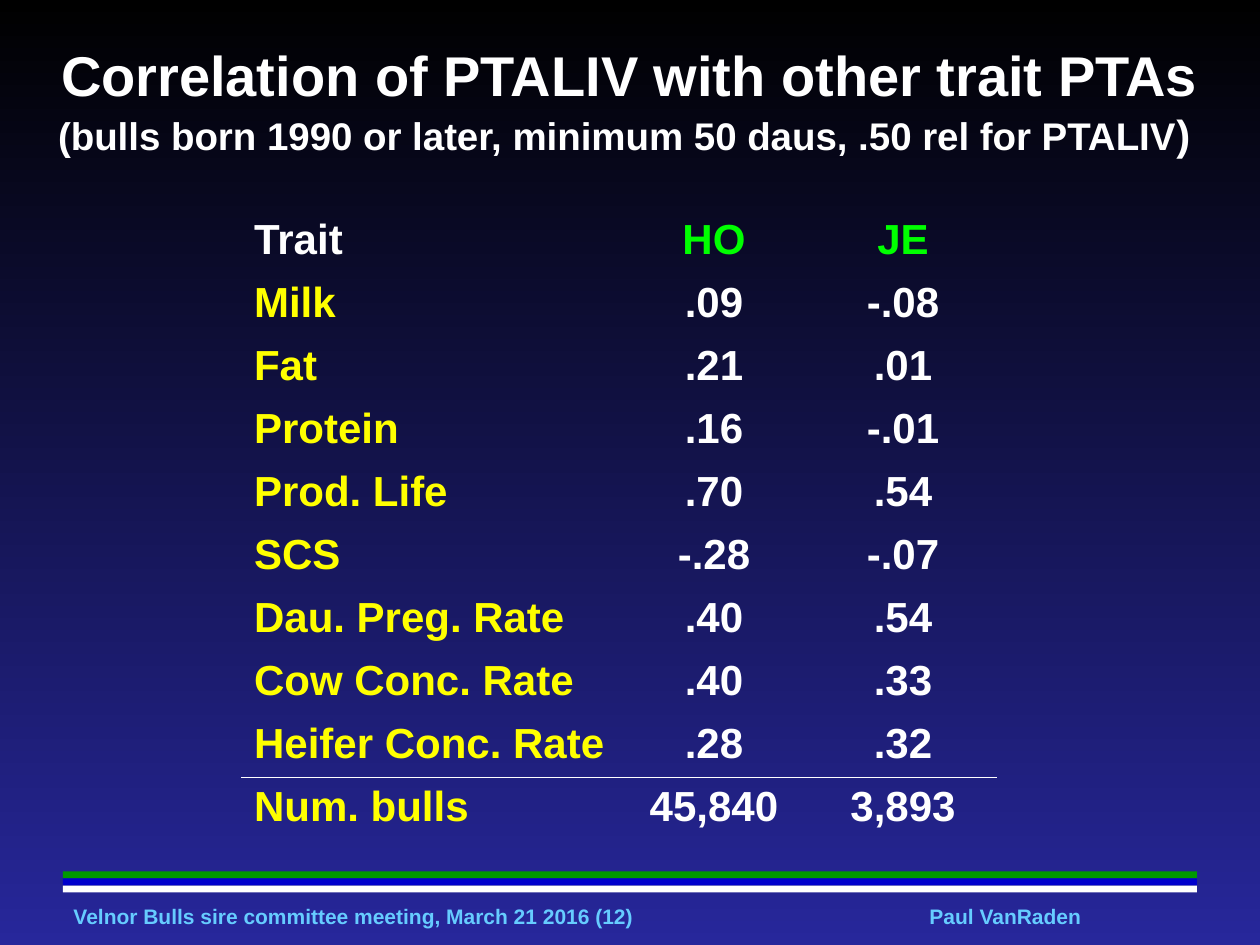
from lxml.etree import SubElement
from pptx import Presentation
from pptx.dml.color import RGBColor
from pptx.enum.shapes import MSO_SHAPE as Preset
from pptx.enum.text import MSO_ANCHOR as Anchor, PP_ALIGN as Align
from pptx.oxml.ns import qn
from pptx.util import Pt

BLACK = RGBColor(0x00, 0x00, 0x00)
NAVY = RGBColor(0x27, 0x27, 0x9B)
WHITE = RGBColor(0xFF, 0xFF, 0xFF)
YELLOW = RGBColor(0xFF, 0xFF, 0x00)
LIME = RGBColor(0x00, 0xFF, 0x00)
GREEN = RGBColor(0x00, 0x99, 0x00)
BLUE = RGBColor(0x00, 0x00, 0xCC)
SKY = RGBColor(0x66, 0xCC, 0xFF)

NO_STYLE = "{2D5ABB26-0587-4C30-8999-92F81FD0307C}"
COLUMN_WIDTHS = (216, 108, 108)
CORRELATIONS = (
    ("Trait", "HO", "JE"),
    ("Milk", ".09", "-.08"),
    ("Fat", ".21", ".01"),
    ("Protein", ".16", "-.01"),
    ("Prod. Life", ".70", ".54"),
    ("SCS", "-.28", "-.07"),
    ("Dau. Preg. Rate", ".40", ".54"),
    ("Cow Conc. Rate", ".40", ".33"),
    ("Heifer Conc. Rate", ".28", ".32"),
    ("Num. bulls", "45,840", "3,893"),
)


def set_font(font, size, color):
    font.name = "Arial"
    font.size = Pt(size)
    font.bold = True
    font.color.rgb = color


def add_background(slide):
    fill = slide.background.fill
    fill.gradient()
    fill.gradient_angle = 270
    for stop, color in zip(fill.gradient_stops, (BLACK, NAVY)):
        stop.color.rgb = color


def add_title(slide, left, top, width, height):
    frame = slide.shapes.add_textbox(Pt(left), Pt(top), Pt(width), Pt(height)).text_frame
    frame.word_wrap = True
    frame.vertical_anchor = Anchor.MIDDLE
    paragraph = frame.paragraphs[0]
    paragraph.alignment = Align.CENTER
    for text, size in (
        ("Correlation of PTALIV with other trait PTAs ", 32),
        ("(bulls born 1990 or later, minimum 50 daus, .50 rel for PTALIV", 22),
        (") ", 24),
    ):
        run = paragraph.add_run()
        run.text = text
        set_font(run.font, size, WHITE)


def add_rule(cell, side):
    line = SubElement(cell._tc.get_or_add_tcPr(), qn(f"a:{side}"), w=str(Pt(1)))
    fill = SubElement(line, qn("a:solidFill"))
    SubElement(fill, qn("a:srgbClr"), val=str(WHITE))


def cell_color(row, column):
    if row == 0:
        return LIME if column else WHITE
    return WHITE if column else YELLOW


def add_correlations(slide, left, top, width, height):
    row_count = len(CORRELATIONS)
    table = slide.shapes.add_table(
        row_count, len(COLUMN_WIDTHS), Pt(left), Pt(top), Pt(width), Pt(height)
    ).table
    table.first_row = table.horz_banding = False
    table._tbl.tblPr.find(qn("a:tableStyleId")).text = NO_STYLE
    for column, column_width in zip(table.columns, COLUMN_WIDTHS):
        column.width = Pt(column_width)
    for row, values in enumerate(CORRELATIONS):
        for column, value in enumerate(values):
            cell = table.cell(row, column)
            cell.text = value
            paragraph = cell.text_frame.paragraphs[0]
            paragraph.alignment = Align.CENTER if column else Align.LEFT
            set_font(paragraph.font, 24, cell_color(row, column))
            if row == row_count - 2:
                add_rule(cell, "lnB")
            elif row == row_count - 1:
                add_rule(cell, "lnT")
            cell.fill.background()


def add_stripes(slide, left, top, width, height):
    colors = (GREEN, BLUE, WHITE)
    stripe_height = height / len(colors)
    for index, color in enumerate(colors):
        stripe = slide.shapes.add_shape(
            Preset.RECTANGLE, Pt(left), Pt(top + index * stripe_height),
            Pt(width), Pt(stripe_height),
        )
        stripe.shadow.inherit = False
        stripe.fill.solid()
        stripe.fill.fore_color.rgb = color
        stripe.line.fill.background()


def add_footer_text(slide, text, alignment, left, top, width, height):
    frame = slide.shapes.add_textbox(Pt(left), Pt(top), Pt(width), Pt(height)).text_frame
    frame.margin_left = frame.margin_right = frame.margin_top = frame.margin_bottom = 0
    frame.word_wrap = alignment == Align.LEFT
    frame.vertical_anchor = Anchor.MIDDLE
    paragraph = frame.paragraphs[0]
    paragraph.text = text
    paragraph.alignment = alignment
    set_font(paragraph.font, 12, SKY)


def main():
    presentation = Presentation()
    presentation.slide_width = Pt(720)
    presentation.slide_height = Pt(540)
    slide = presentation.slides.add_slide(presentation.slide_layouts[6])
    add_background(slide)
    add_footer_text(slide, "Velnor Bulls sire committee meeting, March 21 2016 (12)",
                    Align.LEFT, 42, 516.5, 340, 14.5)
    add_footer_text(slide, "Paul VanRaden", Align.CENTER, 530.5, 516, 88, 14.5)
    add_stripes(slide, 36, 498, 648, 12)
    add_correlations(slide, 138, 120, 432, 360)
    add_title(slide, 6, 12, 708, 90)
    presentation.save("out.pptx")


if __name__ == "__main__":
    main()
